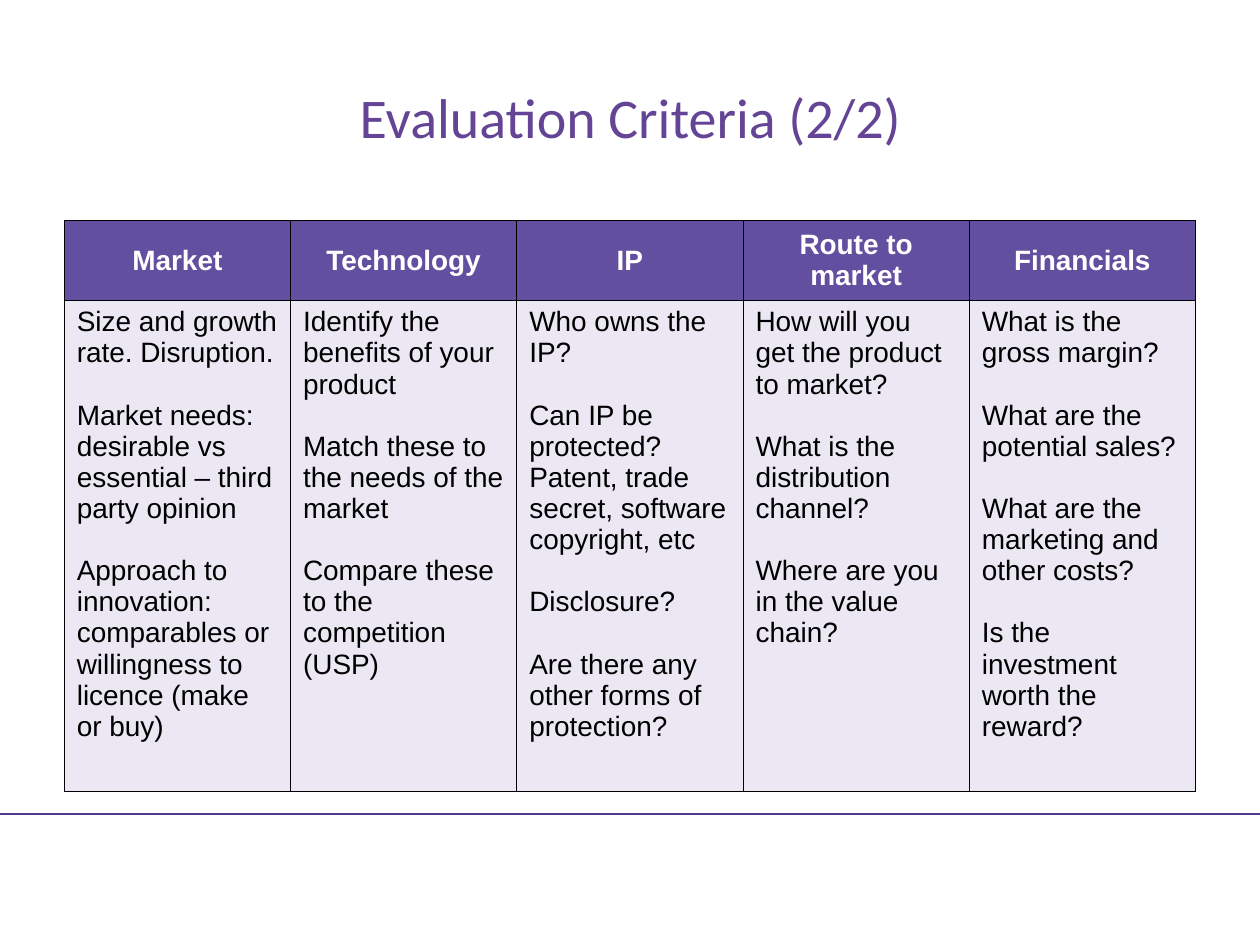
import pptx
import pptx.dml.color
import pptx.enum.shapes
import pptx.enum.text
import pptx.oxml.ns
import pptx.util
from lxml import etree

Inches = pptx.util.Inches
Pt = pptx.util.Pt
RGBColor = pptx.dml.color.RGBColor
ALIGN = pptx.enum.text.PP_ALIGN
ANCHOR = pptx.enum.text.MSO_ANCHOR
qn = pptx.oxml.ns.qn

TITLE_PURPLE = RGBColor(0x64, 0x45, 0x95)
RULE_PURPLE = RGBColor(0x4F, 0x3A, 0x8D)
HEADER_PURPLE = RGBColor(0x62, 0x4F, 0xA0)
BODY_LILAC = RGBColor(0xEB, 0xE8, 0xF4)
WHITE = RGBColor(0xFF, 0xFF, 0xFF)
BLACK = RGBColor(0, 0, 0)

QUESTION_GAP = Pt(17.8)

# Each criterion holds groups of paragraphs; a gap separates the groups
CRITERIA = {
    "Market": [
        ["Size and growth rate. Disruption."],
        ["Market needs: desirable vs essential – third party opinion"],
        ["Approach to innovation: comparables or willingness to licence (make or buy)"],
    ],
    "Technology": [
        ["Identify the benefits of your product"],
        ["Match these to the needs of the market"],
        ["Compare these to the competition (USP)"],
    ],
    "IP": [
        ["Who owns the IP?"],
        ["Can IP be protected?", "Patent, trade secret, software copyright, etc"],
        ["Disclosure?"],
        ["Are there any other forms of protection?"],
    ],
    "Route to market": [
        ["How will you get the product to market?"],
        ["What is the distribution channel?"],
        ["Where are you in the value chain?"],
    ],
    "Financials": [
        ["What is the gross margin?"],
        ["What are the potential sales?"],
        ["What are the marketing and other costs?"],
        ["Is the investment worth the reward?"],
    ],
}


def add_run(paragraph, text, font_name, size, color, bold=False):
    run = paragraph.add_run()
    run.text = text
    run.font.name = font_name
    run.font.size = Pt(size)
    run.font.bold = bold
    run.font.color.rgb = color


def add_footer_rule(slide):
    rule = slide.shapes.add_connector(
        pptx.enum.shapes.MSO_CONNECTOR.STRAIGHT,
        Inches(0), Inches(6.46), Inches(10), Inches(6.46))
    rule.line.color.rgb = RULE_PURPLE
    rule.line.width = Pt(1)
    etree.SubElement(rule._element.spPr, qn("a:effectLst"))


def add_title(slide, text):
    box = slide.shapes.add_textbox(Inches(0.52), Inches(0.3), Inches(8.97), Inches(1.25))
    frame = box.text_frame
    frame.word_wrap = True
    frame.vertical_anchor = ANCHOR.MIDDLE
    paragraph = frame.paragraphs[0]
    paragraph.alignment = ALIGN.CENTER
    add_run(paragraph, text, "Calibri", 32, TITLE_PURPLE)


def style_cell(cell, fill_color):
    # Borders precede the fill in the cell properties
    properties = cell._tc.get_or_add_tcPr()
    for side in ("lnL", "lnR", "lnT", "lnB"):
        border = etree.SubElement(properties, qn(f"a:{side}"), w=str(Pt(0.5)))
        fill = etree.SubElement(border, qn("a:solidFill"))
        etree.SubElement(fill, qn("a:srgbClr"), val=str(BLACK))
    cell.fill.solid()
    cell.fill.fore_color.rgb = fill_color


def fill_header(cell, heading):
    style_cell(cell, HEADER_PURPLE)
    cell.vertical_anchor = ANCHOR.MIDDLE
    paragraph = cell.text_frame.paragraphs[0]
    paragraph.alignment = ALIGN.CENTER
    add_run(paragraph, heading, "Arial", 16, WHITE, bold=True)


def fill_questions(cell, groups):
    style_cell(cell, BODY_LILAC)
    frame = cell.text_frame
    for group_index, group in enumerate(groups):
        for line_index, text in enumerate(group):
            first = group_index == line_index == 0
            paragraph = frame.paragraphs[0] if first else frame.add_paragraph()
            if group_index and line_index == 0:
                paragraph.space_before = QUESTION_GAP
            add_run(paragraph, text, "Arial", 16, BLACK)


def add_criteria_table(slide, criteria):
    table = slide.shapes.add_table(
        2, len(criteria), Inches(0.51), Inches(1.75), Inches(8.98), Inches(4.52)).table
    table.rows[0].height = Inches(0.62)
    table.rows[1].height = Inches(3.9)
    for column, (heading, groups) in enumerate(criteria.items()):
        fill_header(table.cell(0, column), heading)
        fill_questions(table.cell(1, column), groups)


def main():
    presentation = pptx.Presentation()
    presentation.slide_width = Inches(10)
    presentation.slide_height = Inches(7.5)
    slide = presentation.slides.add_slide(presentation.slide_layouts[6])

    add_footer_rule(slide)
    add_title(slide, "Evaluation Criteria (2/2)")
    add_criteria_table(slide, CRITERIA)

    presentation.save("out.pptx")


if __name__ == "__main__":
    main()
